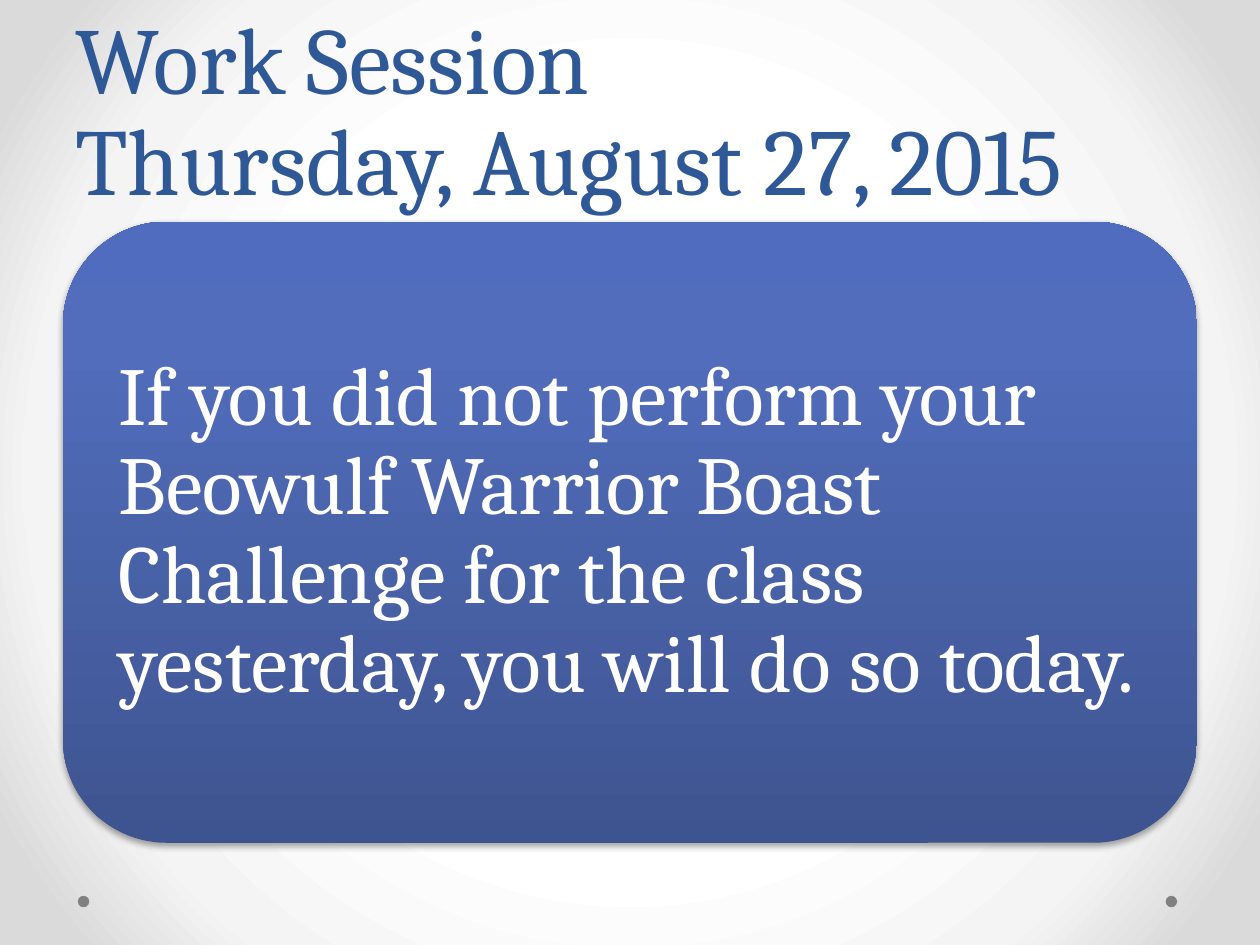
from lxml.etree import SubElement
from pptx import Presentation
from pptx.dml.color import RGBColor
from pptx.enum.shapes import MSO_SHAPE as SHAPE
from pptx.enum.text import MSO_ANCHOR as ANCHOR, PP_ALIGN as ALIGN
from pptx.oxml.ns import qn
from pptx.util import Cm, Pt

WHITE = RGBColor(0xFF, 0xFF, 0xFF)
BLACK = RGBColor(0x00, 0x00, 0x00)
PALE_GREY = RGBColor(0xF4, 0xF4, 0xF4)
LIGHT_GREY = RGBColor(0xDA, 0xDA, 0xDA)
DOT_GREY = RGBColor(0x80, 0x80, 0x80)
TITLE_BLUE = RGBColor(0x2F, 0x58, 0x97)
DARK_BLUE = RGBColor(0x3E, 0x54, 0x90)
MID_BLUE = RGBColor(0x51, 0x6D, 0xBB)
BRIGHT_BLUE = RGBColor(0x4F, 0x6C, 0xBE)


def add_xml(parent, tag, **attrs):
    return SubElement(parent, qn(tag), {k: str(v) for k, v in attrs.items()})


class SlideBuilder:
    font = "Cambria"

    def __init__(self, slide):
        self.slide = slide

    def gradient(self, fill, element, stops):
        fill.gradient()
        grad = element.find(".//" + qn("a:gradFill"))
        for child in list(grad):
            grad.remove(child)
        gs_list = add_xml(grad, "a:gsLst")
        for pos, color in stops:
            gs = add_xml(gs_list, "a:gs", pos=pos * 1000)
            add_xml(gs, "a:srgbClr", val=color)
        return grad

    def background(self, stops):
        fill = self.slide.background.fill
        grad = self.gradient(fill, self.slide.element, stops)
        circle = add_xml(grad, "a:path", path="circle")
        add_xml(circle, "a:fillToRect", l=50000, t=50000, r=50000, b=50000)

    def set_text(self, tf, text, size, color, spacing, anchor):
        tf.word_wrap = True
        tf.vertical_anchor = anchor
        p = tf.paragraphs[0]
        p.text = text
        p.alignment = ALIGN.LEFT
        p.line_spacing = spacing
        for r in p.runs:
            r.font.name = self.font
            r.font.size = Pt(size)
            r.font.color.rgb = color

    def title(self, x, y, w, h, text):
        tf = self.slide.shapes.add_textbox(Cm(x), Cm(y), Cm(w), Cm(h)).text_frame
        self.set_text(tf, text, 54, TITLE_BLUE, Pt(58), ANCHOR.BOTTOM)

    def shape(self, kind, x, y, w, h):
        sp = self.slide.shapes.add_shape(kind, Cm(x), Cm(y), Cm(w), Cm(h))
        sp.shadow.inherit = False
        sp.line.fill.background()
        return sp

    def dot(self, x, y, size):
        sp = self.shape(SHAPE.OVAL, x, y, size, size)
        sp.fill.solid()
        sp.fill.fore_color.rgb = DOT_GREY

    def card(self, x, y, w, h, text, stops):
        sp = self.shape(SHAPE.ROUNDED_RECTANGLE, x, y, w, h)
        props = sp.element.spPr
        grad = self.gradient(sp.fill, props, stops)
        add_xml(grad, "a:lin", ang=270 * 60000, scaled=0)
        effects = props.find(qn("a:effectLst"))
        shadow = add_xml(effects, "a:outerShdw", blurRad=Pt(3.1), dist=Pt(1.8),
                         dir=90 * 60000, rotWithShape=0)
        add_xml(add_xml(shadow, "a:srgbClr", val=BLACK), "a:alpha", val=35000)
        tf = sp.text_frame
        tf.margin_left = tf.margin_right = tf.margin_top = tf.margin_bottom = Cm(0.51)
        self.set_text(tf, text, 47, WHITE, 0.9, ANCHOR.MIDDLE)


def main():
    prs = Presentation()
    prs.slide_width, prs.slide_height = Cm(25.4), Cm(19.05)
    s = SlideBuilder(prs.slides.add_slide(prs.slide_layouts[6]))
    s.background([(50, WHITE), (76, PALE_GREY), (92, LIGHT_GREY)])
    for x in (23.5, 1.57):
        s.dot(x, 18.06, 0.23)
    s.title(1.27, 0, 22.86, 4.45, "Work Session\vThursday, August 27, 2015")
    s.card(1.27, 4.47, 22.86, 12.52,
           "If you did not perform your Beowulf Warrior Boast Challenge "
           "for the class yesterday, you will do so today.",
           [(0, DARK_BLUE), (80, MID_BLUE), (100, BRIGHT_BLUE)])
    prs.save("out.pptx")


if __name__ == "__main__":
    main()
